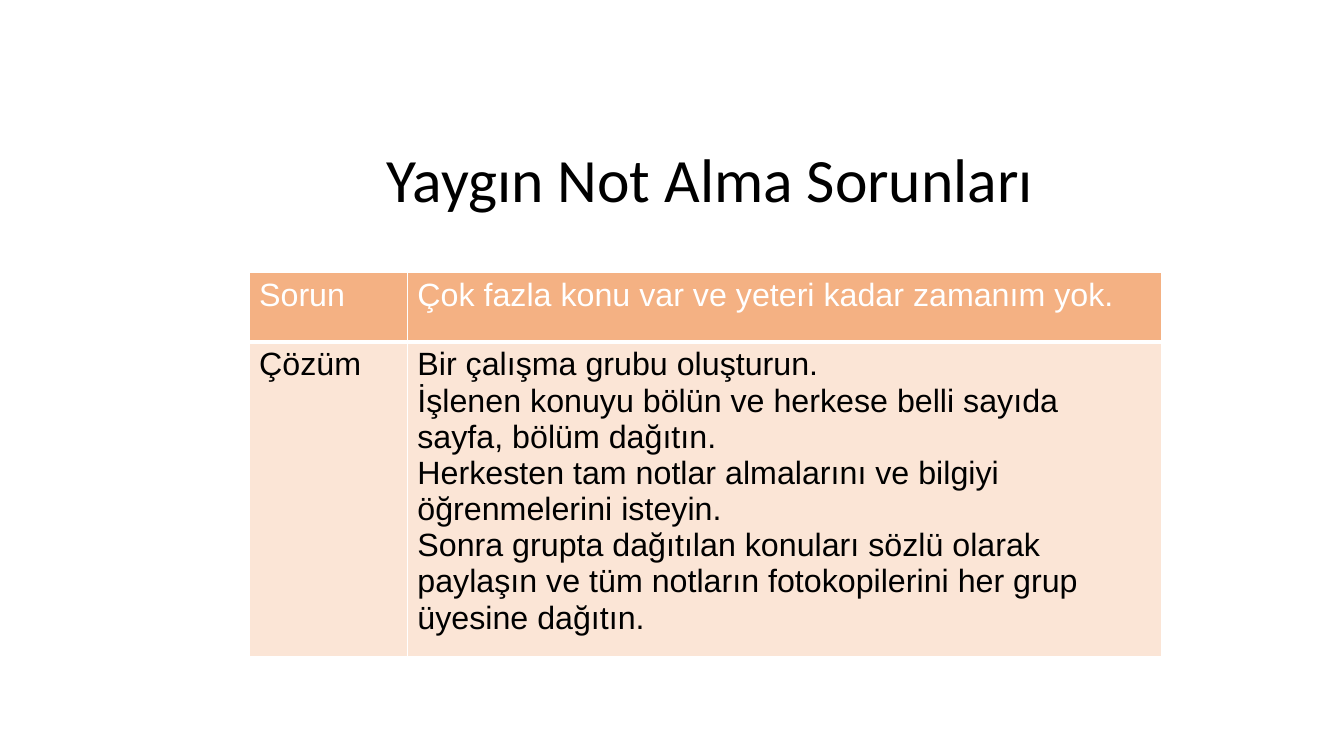
from pptx import Presentation
from pptx import util as u
from pptx.dml.color import RGBColor
from pptx.enum import text as t
from pptx.oxml import parse_xml
from pptx.oxml.ns import nsdecls

COLOURS = {"white": "FFFFFF", "black": "000000", "header": "F4B183", "body": "FBE5D6"}


def write(frame, *lines, size, font, colour, align=t.PP_ALIGN.LEFT, spacing=None):
    """Fill a text frame with one paragraph per line."""
    for index, line in enumerate(lines):
        paragraph = frame.add_paragraph() if index else frame.paragraphs[0]
        paragraph.alignment = align
        if spacing:
            paragraph.line_spacing = spacing
        run = paragraph.add_run()
        run.text = line
        run.font.size = u.Pt(size)
        run.font.name = font
        run.font.bold = False
        run.font.color.rgb = RGBColor.from_string(COLOURS[colour])


class SlideBuilder:
    title_font = "Calibri"
    table_font = "Arial"

    def __init__(self, deck):
        self.slide = deck.slides.add_slide(deck.slide_layouts[5])

    def title(self, wording, left, top, width, height):
        heading = self.slide.shapes.title
        heading.left, heading.top = u.Inches(left), u.Inches(top)
        heading.width, heading.height = u.Inches(width), u.Inches(height)
        heading.text_frame.word_wrap = True
        heading.text_frame.vertical_anchor = t.MSO_ANCHOR.MIDDLE
        write(heading.text_frame, wording, size=44, font=self.title_font,
              colour="black", align=t.PP_ALIGN.CENTER, spacing=0.9)

    def borders(self, cell, bottom):
        properties = cell._tc.get_or_add_tcPr()
        widths = {"L": 1, "R": 1, "T": 1, "B": bottom}
        for index, (side, width) in enumerate(widths.items()):
            properties.insert(index, parse_xml(
                f'<a:ln{side} {nsdecls("a")} w="{u.Pt(width)}"><a:solidFill>'
                f'<a:srgbClr val="{COLOURS["white"]}"/></a:solidFill></a:ln{side}>'))

    def table(self, rows, left, top, widths, heights):
        grid = self.slide.shapes.add_table(
            len(rows), len(widths), u.Inches(left), u.Inches(top),
            u.Inches(sum(widths)), u.Inches(sum(heights))).table
        for column, width in zip(grid.columns, widths):
            column.width = u.Inches(width)
        for index, (row, height) in enumerate(zip(grid.rows, heights)):
            row.height = u.Inches(height)
            fill, ink, bottom = ("body", "black", 1) if index else ("header", "white", 3)
            for cell, lines in zip(row.cells, rows[index]):
                cell.fill.solid()
                cell.fill.fore_color.rgb = RGBColor.from_string(COLOURS[fill])
                self.borders(cell, bottom)
                write(cell.text_frame, *lines, size=23, font=self.table_font, colour=ink)


def main():
    deck = Presentation()
    deck.slide_width, deck.slide_height = u.Inches(13.33), u.Inches(7.5)
    page = SlideBuilder(deck)

    # Problem and solution table
    problem = [["Sorun"], ["Çok fazla konu var ve yeteri kadar zamanım yok."]]
    solution = [["Çözüm"], [
        "Bir çalışma grubu oluşturun.",
        "İşlenen konuyu bölün ve herkese belli sayıda sayfa, bölüm dağıtın.",
        "Herkesten tam notlar almalarını ve bilgiyi öğrenmelerini isteyin.",
        "Sonra grupta dağıtılan konuları sözlü olarak paylaşın ve tüm notların "
        "fotokopilerini her grup üyesine dağıtın.",
    ]]
    page.table([problem, solution], 2.47, 2.7, widths=[1.57, 7.48], heights=[0.69, 3.12])

    # Heading
    page.title("Yaygın Not Alma Sorunları", 2.47, 1.19, 9.15, 1.25)

    deck.save("out.pptx")


if __name__ == "__main__":
    main()
